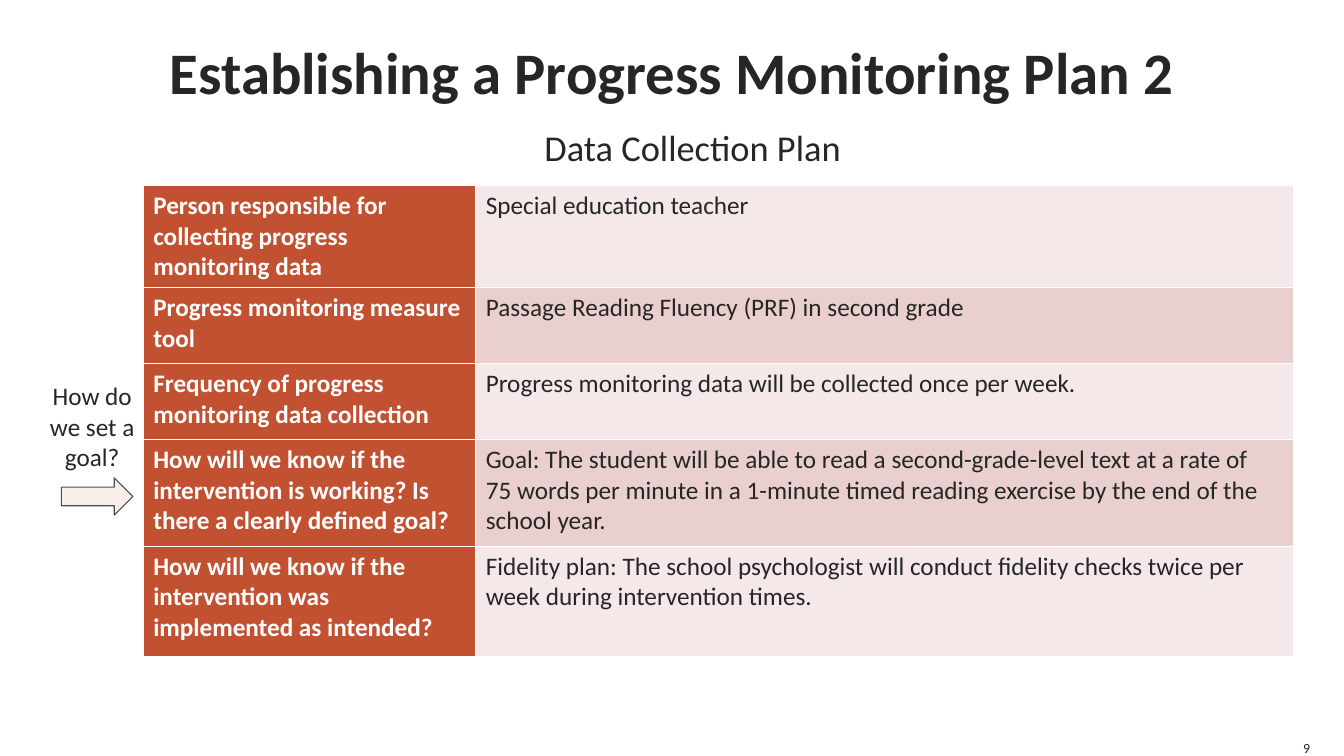
from dataclasses import dataclass

from lxml.etree import SubElement
from pptx import Presentation
from pptx.dml.color import RGBColor
from pptx.enum.shapes import MSO_SHAPE
from pptx.enum.text import MSO_ANCHOR, MSO_AUTO_SIZE, PP_ALIGN
from pptx.oxml.ns import qn
from pptx.util import Cm, Pt

FONT = "Calibri"
DARK = "262626"
WHITE = "FFFFFF"
RUST = "C25131"
BANDS = ("F4E9E8", "E9D0CE")


@dataclass
class Box:
    left: float
    top: float
    width: float
    height: float

    def area(self) -> tuple:
        return Cm(self.left), Cm(self.top), Cm(self.width), Cm(self.height)


@dataclass
class Style:
    size: int
    color: str = DARK
    bold: bool = False
    align: PP_ALIGN = PP_ALIGN.CENTER
    anchor: MSO_ANCHOR = MSO_ANCHOR.TOP
    inset: bool = False
    wrap: bool = True


@dataclass
class Row:
    height: float
    label: str
    answer: str


ROWS = [
    Row(2.49, "Person responsible for collecting progress monitoring data",
        "Special education teacher"),
    Row(1.91, "Progress monitoring measure tool",
        "Passage Reading Fluency (PRF) in second grade"),
    Row(1.91, "Frequency of progress monitoring data collection",
        "Progress monitoring data will be collected once per week."),
    Row(2.69, "How will we know if the intervention is working? "
        "Is there a clearly defined goal?",
        "Goal: The student will be able to read a second-grade-level text "
        "at a rate of \v75 words per minute in a 1-minute timed reading "
        "exercise by the end of the school year."),
    Row(2.79, "How will we know if the intervention was implemented as intended?",
        "Fidelity plan: The school psychologist will conduct fidelity checks "
        "twice per week during intervention times."),
]


def rgb(code: str) -> RGBColor:
    return RGBColor.from_string(code)


def paint(item, code: str) -> None:
    item.fill.solid()
    item.fill.fore_color.rgb = rgb(code)


def write(frame, text: str, style: Style) -> None:
    frame.text = text
    for para in frame.paragraphs:
        para.alignment = style.align
        for run in para.runs:
            run.font.name = FONT
            run.font.size = Pt(style.size)
            run.font.bold = style.bold
            run.font.color.rgb = rgb(style.color)


def dress(shape, text: str, style: Style) -> None:
    frame = shape.text_frame
    write(frame, text, style)
    frame.auto_size = MSO_AUTO_SIZE.NONE
    frame.word_wrap = style.wrap
    frame.vertical_anchor = style.anchor
    if not style.inset:
        frame.margin_left = frame.margin_right = 0
        frame.margin_top = frame.margin_bottom = 0


def label(slide, box: Box, text: str, style: Style):
    shape = slide.shapes.add_textbox(*box.area())
    dress(shape, text, style)
    return shape


def edge(cell, code: str, width: float) -> None:
    props = cell._tc.get_or_add_tcPr()
    for spot, side in enumerate(("lnL", "lnR", "lnT", "lnB")):
        line = SubElement(props, qn(f"a:{side}"), w=str(Pt(width)))
        fill = SubElement(line, qn("a:solidFill"))
        SubElement(fill, qn("a:srgbClr"), val=code)
        props.insert(spot, line)


def fill_cell(cell, text: str, back: str, style: Style) -> None:
    write(cell.text_frame, text, style)
    paint(cell, back)
    edge(cell, WHITE, 0.75)


def add_plan(slide, box: Box, widths: tuple, rows: list[Row]) -> None:
    table = slide.shapes.add_table(len(rows), len(widths), *box.area()).table
    for col, width in zip(table.columns, widths):
        col.width = Cm(width)
    head = Style(18, WHITE, True, PP_ALIGN.LEFT)
    body = Style(18, align=PP_ALIGN.LEFT)
    for i, row in enumerate(rows):
        table.rows[i].height = Cm(row.height)
        fill_cell(table.cell(i, 0), row.label, RUST, head)
        fill_cell(table.cell(i, 1), row.answer, BANDS[i % 2], body)


def main() -> None:
    deck = Presentation()
    deck.slide_width, deck.slide_height = Cm(33.87), Cm(19.05)
    slide = deck.slides.add_slide(deck.slide_layouts[5])

    # Title and subtitle
    title = slide.shapes.title
    title.left, title.top, title.width, title.height = Box(1.27, 0, 31.32, 3.56).area()
    dress(title, "Establishing a Progress Monitoring Plan 2",
          Style(42, bold=True, anchor=MSO_ANCHOR.MIDDLE))
    sub = label(slide, Box(1.8, 2.87, 31.32, 1.6), "Data Collection Plan", Style(26))
    sub.text_frame.paragraphs[0].line_spacing = 1.25

    # Plan table
    widths = (8.38, 20.6)
    high = sum(row.height for row in ROWS)
    add_plan(slide, Box(3.61, 4.67, sum(widths), high), widths, ROWS)

    # Goal question with its arrow
    label(slide, Box(0.84, 9.47, 2.97, 2.57), "How do we set a goal?",
          Style(18, inset=True))
    arrow = slide.shapes.add_shape(MSO_SHAPE.RIGHT_ARROW,
                                   *Box(1.55, 12.04, 1.8, 0.94).area())
    arrow.shadow.inherit = False
    paint(arrow, "F9EDEA")
    arrow.line.color.rgb = rgb("4D4D4F")
    arrow.line.width = Pt(0.75)

    # Page number
    label(slide, Box(32.59, 18.62, 0.43, 0.43), "9",
          Style(10, align=PP_ALIGN.RIGHT, anchor=MSO_ANCHOR.BOTTOM, wrap=False))

    deck.save("out.pptx")


if __name__ == "__main__":
    main()
